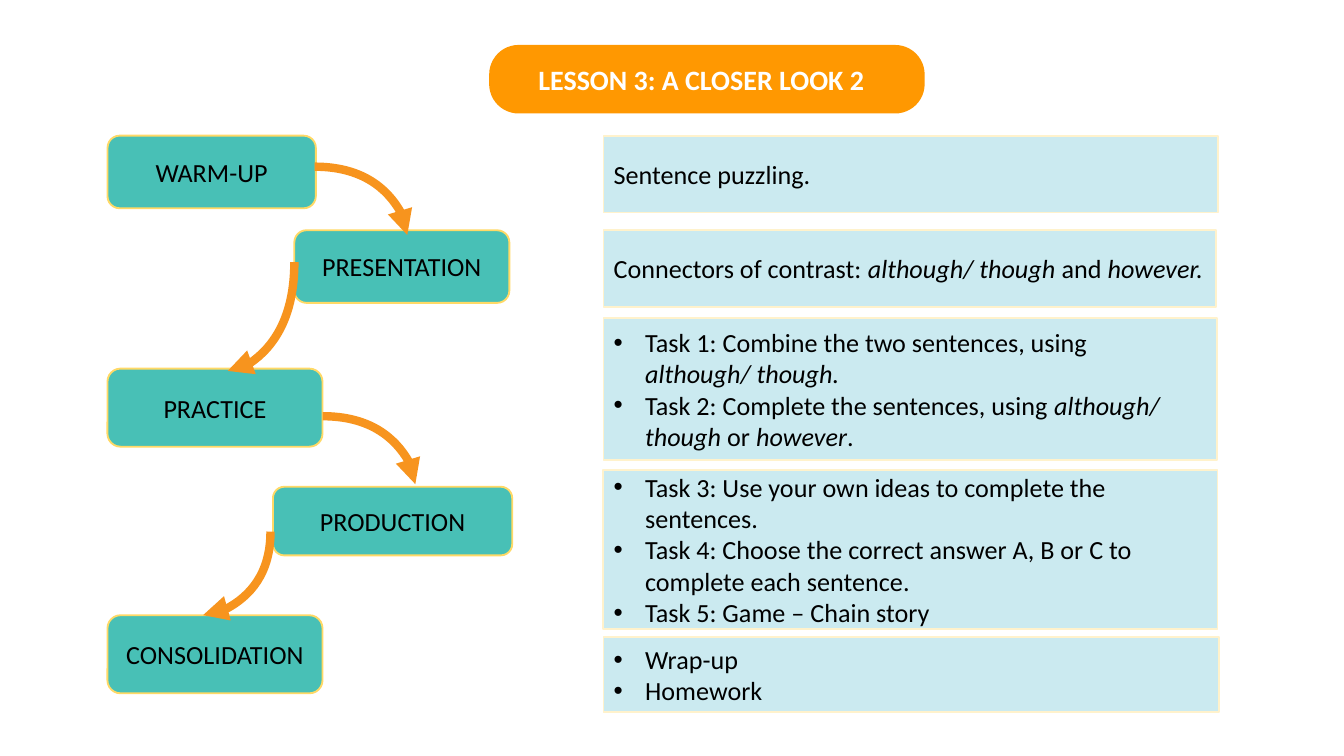
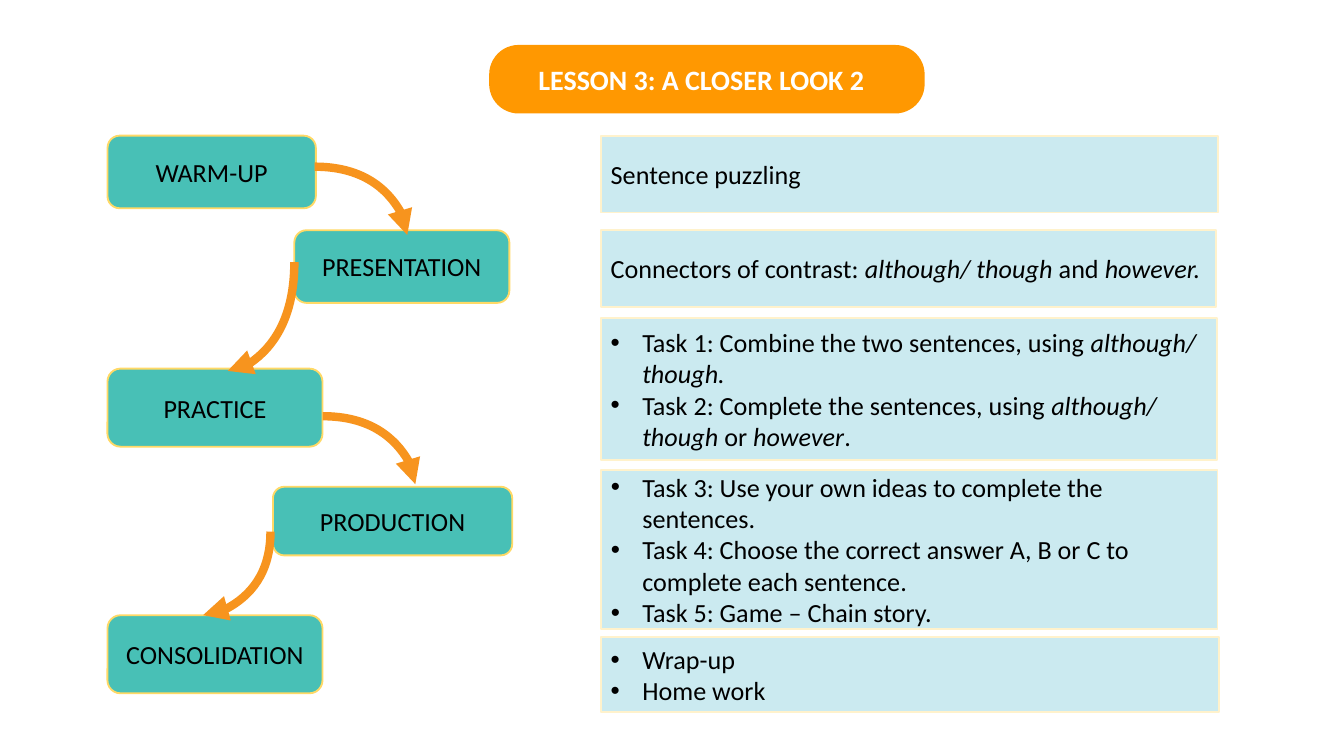
"""Build two lesson overview slides: staged boxes, curved arrows and task panels."""
from dataclasses import dataclass

from lxml import etree
from pptx import Presentation
from pptx.dml.color import RGBColor
from pptx.enum.shapes import MSO_CONNECTOR, MSO_SHAPE
from pptx.enum.text import MSO_ANCHOR, PP_ALIGN
from pptx.oxml.ns import qn
from pptx.util import Pt

ROUNDED = MSO_SHAPE.ROUNDED_RECTANGLE
RECTANGLE = MSO_SHAPE.RECTANGLE
CURVE = MSO_CONNECTOR.CURVE
TOP, MIDDLE = MSO_ANCHOR.TOP, MSO_ANCHOR.MIDDLE
LEFT, CENTER = PP_ALIGN.LEFT, PP_ALIGN.CENTER


@dataclass(frozen=True)
class Theme:
    font: str = "Calibri"
    title_size: float = 15
    body_size: float = 14
    outline: float = 1
    arrow_width: float = 4.5
    bullet_indent: float = 16.9
    banner: str = "FF9801"
    stage: str = "48C0B6"
    stage_edge: str = "FFD966"
    panel: str = "CBEAF0"
    panel_edge: str = "FFF2CC"
    arrow: str = "F7941E"
    dark: str = "000000"
    light: str = "FFFFFF"


THEME = Theme()
TITLE = "LESSON 3: A CLOSER LOOK 2"
STAGES = [
    ("WARM-UP", 57.6, 72.7, 111.6, 38.9),
    ("PRESENTATION", 157.7, 123.4, 115.2, 38.9),
    ("PRACTICE", 57.6, 197.5, 115.2, 41.8),
    ("PRODUCTION", 146.2, 260.8, 128.2, 36.8),
    ("CONSOLIDATION", 57.6, 329.6, 115.2, 41.8),
]
ARROWS = [
    (168.6, 89.3, 218.2, 125.9),
    (157.7, 140.4, 122, 198.7),
    (172.8, 223, 222.5, 259.4),
    (144.9, 284.8, 108.8, 329.6),
]
PANELS = [
    (72.8, 41.1, 652.5),
    (123.3, 41.1, 651.3),
    (170.3, 76.3, 651.8),
    (252, 84.8, 652.3),
    (341.3, 40.4, 653),
]
CONNECTORS = "Connectors of contrast: *although/ though *and *however."
TASK_2 = "Task 2: Complete the sentences, using *although/ though* or *however*."
TASK_3 = "Task 3: Use your own ideas to complete the sentences."
TASK_4 = "Task 4: Choose the correct answer A, B or C to complete each sentence."
LESSONS = [
    (323.3, [
        ["Sentence puzzling."],
        [CONNECTORS],
        ["Task 1: Combine the two sentences, using \n*although/ though.", TASK_2],
        [TASK_3, TASK_4, "Task 5: Game – Chain story"],
        ["Wrap-up", "Homework"],
    ]),
    (321.8, [
        ["Sentence puzzling"],
        [CONNECTORS],
        ["Task 1: Combine the two sentences, using *although/ though.", TASK_2],
        [TASK_3, TASK_4, "Task 5: Game – Chain story."],
        ["Wrap-up", "Home work"],
    ]),
]


def add_box(slide, kind, place, fill, edge=None):
    box = slide.shapes.add_shape(kind, *map(Pt, place))
    box.shadow.inherit = False
    box.fill.solid()
    box.fill.fore_color.rgb = RGBColor.from_string(fill)
    if edge:
        box.line.color.rgb = RGBColor.from_string(edge)
        box.line.width = Pt(THEME.outline)
    else:
        box.line.fill.background()
    return box


def write(box, lines, size, color, align=LEFT, anchor=MIDDLE, bold=False):
    """Write lines in which asterisks switch italics on and off."""
    frame = box.text_frame
    frame.word_wrap = True
    frame.vertical_anchor = anchor
    frame.margin_left = frame.margin_right = Pt(5.4)
    frame.margin_top = frame.margin_bottom = Pt(2.7)
    for index, line in enumerate(lines):
        paragraph = frame.add_paragraph() if index else frame.paragraphs[0]
        paragraph.alignment = align
        if len(lines) > 1:
            properties = paragraph._p.get_or_add_pPr()
            properties.set("marL", str(Pt(THEME.bullet_indent)))
            properties.set("indent", str(-Pt(THEME.bullet_indent)))
            bullet_color = etree.SubElement(properties, qn("a:buClr"))
            etree.SubElement(bullet_color, qn("a:srgbClr"), val=color)
            etree.SubElement(properties, qn("a:buFont"), typeface="Arial")
            etree.SubElement(properties, qn("a:buChar"), char="•")
        paragraph.font.name = THEME.font
        paragraph.font.size = Pt(size)
        paragraph.font.bold = bold
        paragraph.font.color.rgb = RGBColor.from_string(color)
        for position, words in enumerate(line.split("*")):
            if words:
                run = paragraph.add_run()
                run.text = words.rstrip("\n")
                if position % 2:
                    run.font.italic = True
                if words.endswith("\n"):
                    paragraph.add_line_break()


presentation = Presentation()
presentation.slide_width, presentation.slide_height = Pt(720), Pt(405)

for panel_left, panel_texts in LESSONS:
    slide = presentation.slides.add_slide(presentation.slide_layouts[5])

    banner = add_box(slide, ROUNDED, (262.1, 24.1, 233.3, 36.7), THEME.banner)
    banner.adjustments[0] = 0.43
    title = slide.shapes.title
    title.left, title.top, title.width, title.height = map(Pt, (283, 31, 212.4, 23.8))
    write(title, [TITLE], THEME.title_size, THEME.light, anchor=TOP, bold=True)
    banner._element.addnext(title._element)

    for label, *place in STAGES:
        stage = add_box(slide, ROUNDED, place, THEME.stage, THEME.stage_edge)
        write(stage, [label], THEME.body_size, THEME.dark, CENTER)

    for (top, height, right), lines in zip(PANELS, panel_texts):
        place = (panel_left, top, right - panel_left, height)
        panel = add_box(slide, RECTANGLE, place, THEME.panel, THEME.panel_edge)
        write(panel, lines, THEME.body_size, THEME.dark)

    for start_x, start_y, end_x, end_y in ARROWS:
        turned = end_x < start_x
        width, height = abs(end_x - start_x), end_y - start_y
        if turned:
            width, height = height, width
        left = (start_x + end_x - width) / 2
        top = (start_y + end_y - height) / 2
        arrow = slide.shapes.add_connector(
            CURVE, Pt(left), Pt(top), Pt(left + width), Pt(top + height))
        arrow.line.color.rgb = RGBColor.from_string(THEME.arrow)
        arrow.line.width = Pt(THEME.arrow_width)
        outline = arrow.line._get_or_add_ln()
        etree.SubElement(outline, qn("a:tailEnd"), type="triangle")
        properties = arrow._element.spPr
        properties.find(qn("a:prstGeom")).set("prst", "curvedConnector2")
        if turned:
            properties.find(qn("a:xfrm")).set("rot", "5400000")
        etree.SubElement(properties, qn("a:effectLst"))

presentation.save("out.pptx")
